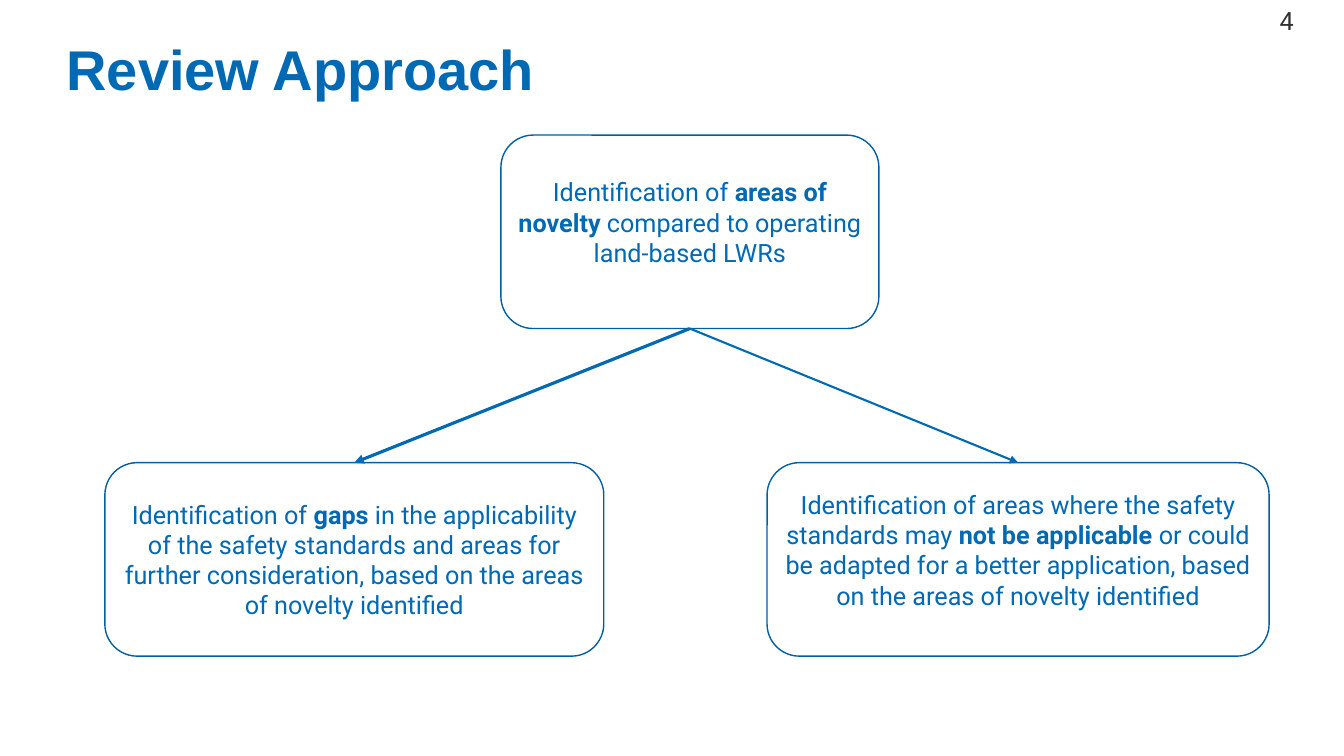
from pptx import Presentation
from pptx.dml.color import RGBColor
from pptx.enum.shapes import MSO_CONNECTOR, MSO_SHAPE
from pptx.enum.text import MSO_ANCHOR, PP_ALIGN
from pptx.oxml.ns import qn
from pptx.util import Pt
from lxml.etree import SubElement

COLORS = {"blue": "0069B4", "edge": "005FA3", "dark": "333233", "white": "FFFFFF"}
TOP = (357.8, 96.5, 270, 138.2)
LEFT = (74.9, 330.5, 356.4, 138.2)
RIGHT = (547.9, 330.5, 358.6, 138.2)
INSET = 5
LIFT = 14


def color(name):
    return RGBColor.from_string(COLORS[name])


def style(run, size, font, hue, bold=False):
    run.font.size = Pt(size)
    run.font.name = font
    run.font.bold = bold
    run.font.color.rgb = color(hue)


def add_title(slide, box, text):
    title = slide.shapes.title
    title.left, title.top, title.width, title.height = map(Pt, box)
    frame = title.text_frame
    frame.text = text
    frame.vertical_anchor = MSO_ANCHOR.MIDDLE
    line = frame.paragraphs[0]
    line.alignment = PP_ALIGN.LEFT
    style(line.runs[0], 40, "Arial", "blue", True)


def add_number(slide, box, text):
    frame = slide.shapes.add_textbox(*map(Pt, box)).text_frame
    frame.word_wrap = True
    frame.text = text
    style(frame.paragraphs[0].runs[0], 18, "Roboto", "dark")


def add_card(slide, box, parts, lift=0):
    card = slide.shapes.add_shape(MSO_SHAPE.ROUNDED_RECTANGLE, *map(Pt, box))
    card.shadow.inherit = False
    card.fill.solid()
    card.fill.fore_color.rgb = color("white")
    card.line.color.rgb = color("edge")
    card.line.width = Pt(1)
    frame = card.text_frame
    frame.word_wrap = True
    frame.vertical_anchor = MSO_ANCHOR.MIDDLE
    frame.margin_left = frame.margin_right = frame.margin_top = Pt(INSET)
    frame.margin_bottom = Pt(INSET + lift)
    line = frame.paragraphs[0]
    line.alignment = PP_ALIGN.CENTER
    for place, part in enumerate(parts):
        run = line.add_run()
        run.text = part
        style(run, 18, "Roboto", "blue", place == 1)
    return card


def add_arrow(slide, start, end, width):
    arrow = slide.shapes.add_connector(MSO_CONNECTOR.STRAIGHT, 0, 0, 0, 0)
    arrow.begin_connect(start, 2)
    arrow.end_connect(end, 0)
    arrow.line.color.rgb = color("blue")
    arrow.line.width = Pt(width)
    SubElement(arrow.line._get_or_add_ln(), qn("a:tailEnd"), type="triangle")
    SubElement(arrow._element.spPr, qn("a:effectLst"))


def add_tree(slide):
    root = add_card(slide, TOP, (
        "Identification of ", "areas of novelty",
        " compared to operating land-based LWRs"), LIFT)
    gaps = add_card(slide, LEFT, (
        "Identification of ", "gaps",
        " in the applicability of the safety standards and areas for "
        "further consideration, based on the areas of novelty identified"))
    limits = add_card(slide, RIGHT, (
        "Identification of areas where the safety standards may ",
        "not be applicable ",
        "or could be adapted for a better application, based on the areas "
        "of novelty identified"), LIFT)
    add_arrow(slide, root, gaps, 2.25)
    add_arrow(slide, root, limits, 1.5)


def main():
    deck = Presentation()
    deck.slide_width, deck.slide_height = Pt(960), Pt(540)
    slide = deck.slides.add_slide(deck.slide_layouts[5])
    add_title(slide, (40.3, 15.1, 866, 67.7), "Review Approach")
    add_number(slide, (907, 0, 53, 23), "4")
    add_tree(slide)
    deck.save("out.pptx")


if __name__ == "__main__":
    main()
